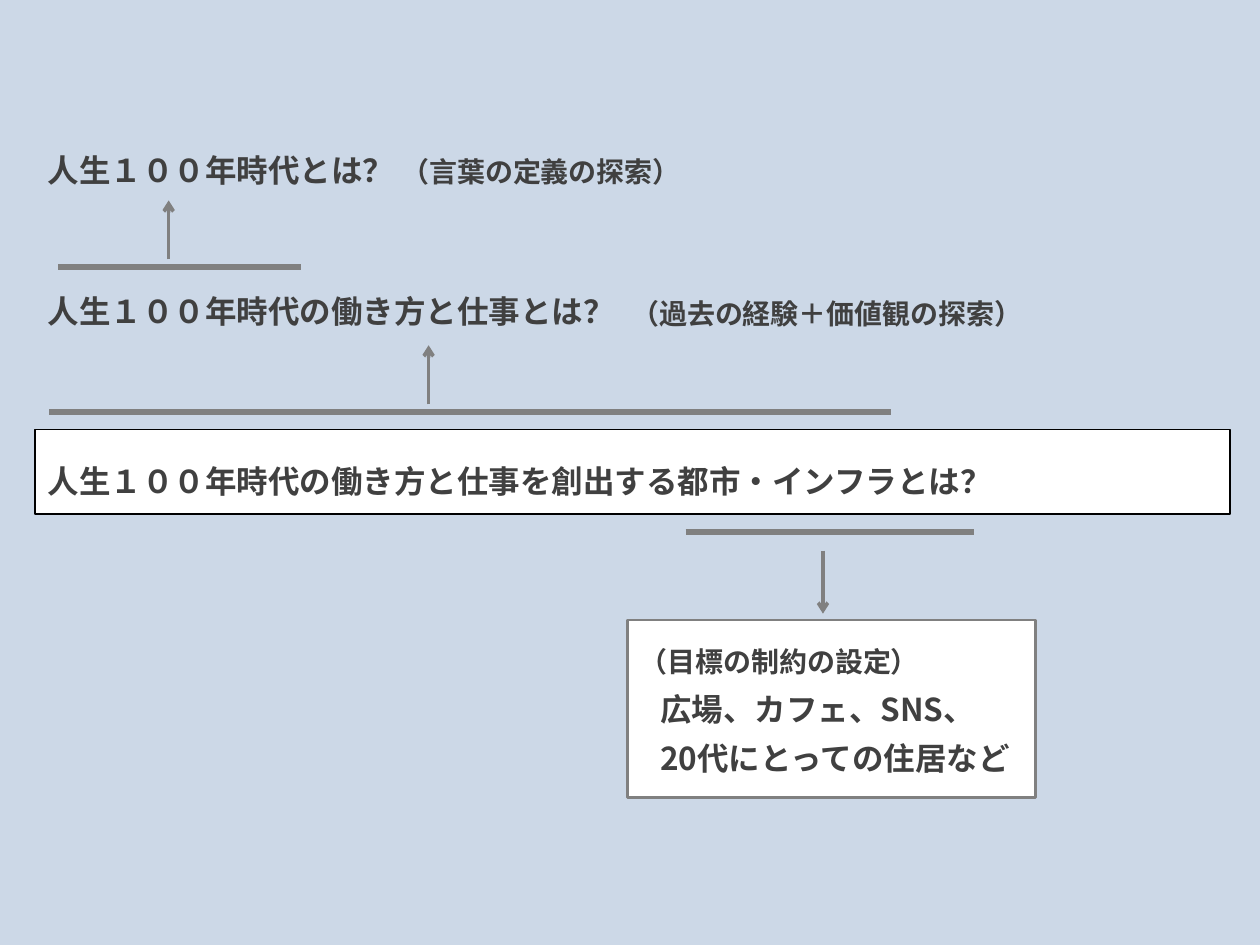
from lxml.etree import SubElement as Sub
from pptx import Presentation as Deck
from pptx.dml.color import RGBColor as RGB
from pptx.enum.shapes import MSO_CONNECTOR as Link, MSO_SHAPE as Kind
from pptx.enum.text import MSO_ANCHOR as Anchor, PP_ALIGN as Align
from pptx.oxml.ns import qn
from pptx.util import Cm, Pt

THEME = dict(
    font="Noto Sans CJK JP",
    back="CCD8E7", text="404040", line="808080", edge="000000", fill="FFFFFF",
    big=18, small=16, wide=32, tight=28,
    bar=3.5, arrow=2,
)

# Questions: top, wording (all share one left edge and size)
LEFT, WIDTH, HIGH = 0.71, 24.08, 1.7
ASKS = [
    (2.39, "人生１００年時代とは？"),
    (5.23, "人生１００年時代の働き方と仕事とは？"),
]
MAIN = (8.66, "人生１００年時代の働き方と仕事を創出する都市・インフラとは？")

# Notes beside the questions: left, top, width, wording
NOTE = 1.22
NOTES = [
    (7.19, 2.62, 7.44, "（言葉の定義の探索）"),
    (11.96, 5.49, 9.42, "（過去の経験＋価値観の探索）"),
]

# Goal panel: left, top, width, height
PANEL = (12.65, 12.5, 8.23, 3.58)
LABEL = "（目標の制約の設定）"
GOALS = ["広場、カフェ、SNS、", "20代にとっての住居など"]

# Bars: left, right, y; arrows: x, from y, to y
BARS = [(1.17, 6.07, 5.38), (0.99, 17.96, 8.31), (13.82, 19.63, 10.72)]
ARROWS = [(3.4, 5.23, 4.04), (8.64, 8.15, 6.96), (16.59, 11.1, 12.37)]


def tint(name):
    return RGB.from_string(THEME[name])


def panel(at, edge, width):
    rect = slide.shapes.add_shape(Kind.RECTANGLE, *map(Cm, at))
    rect.shadow.inherit = False
    rect.fill.solid()
    rect.fill.fore_color.rgb = tint("fill")
    rect.line.color.rgb = tint(edge)
    rect.line.width = Pt(width)
    return rect


def write(shape, rows, size="big", space="wide", align=Align.LEFT):
    frame = shape.text_frame
    frame.word_wrap = True
    frame.vertical_anchor = Anchor.MIDDLE
    frame.text = "\n".join(rows)
    for para in frame.paragraphs:
        para.alignment = align
        para.line_spacing = Pt(THEME[space])
        font = para.font
        font.size = Pt(THEME[size])
        font.bold = True
        font.color.rgb = tint("text")
        font.name = THEME["font"]
        # East Asian typeface
        base = para._p.pPr.find(qn("a:defRPr"))
        Sub(base, qn("a:ea")).set("typeface", THEME["font"])


def label(at, rows, **style):
    write(slide.shapes.add_textbox(*map(Cm, at)), rows, **style)


def rule(x1, y1, x2, y2, width, head=False):
    line = slide.shapes.add_connector(Link.STRAIGHT, *map(Cm, (x1, y1, x2, y2)))
    line.line.color.rgb = tint("line")
    line.line.width = Pt(THEME[width])
    if head:
        Sub(line.line._get_or_add_ln(), qn("a:tailEnd")).set("type", "arrow")
    Sub(line._element.spPr, qn("a:effectLst"))


deck = Deck()
deck.slide_width, deck.slide_height = Cm(25.4), Cm(19.05)
slide = deck.slides.add_slide(deck.slide_layouts[6])
slide.background.fill.solid()
slide.background.fill.fore_color.rgb = tint("back")

# Questions and notes
top, text = MAIN
write(panel((LEFT, top, WIDTH, HIGH), "edge", 1), [text])
for top, text in ASKS:
    label((LEFT, top, WIDTH, HIGH), [text])
for left, top, width, text in NOTES:
    label((left, top, width, NOTE), [text], size="small", align=Align.CENTER)

# Goal panel
panel(PANEL, "line", 1.5)
left, top = PANEL[:2]
label((left, top, 6.38, NOTE), [LABEL], size="small")
label((left + 0.41, top + 0.81, 8.03, 2.74), GOALS, space="tight")

# Bars and arrows
for x1, x2, y in BARS:
    rule(x1, y, x2, y, "bar")
for x, y1, y2 in ARROWS:
    rule(x, y1, x, y2, "arrow", head=True)

deck.save("out.pptx")
